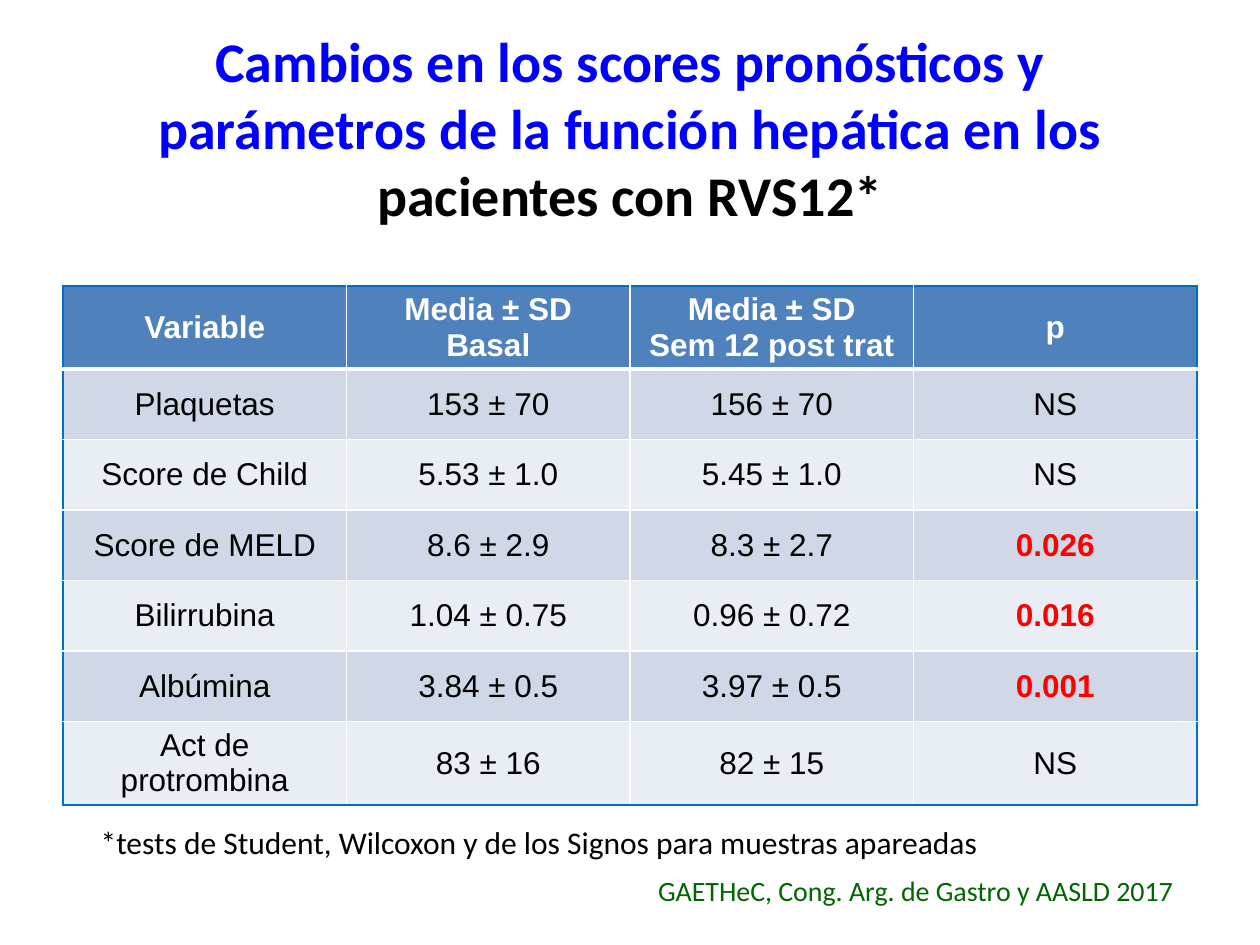
from dataclasses import dataclass

from lxml import etree
from pptx import Presentation
from pptx.dml.color import RGBColor
from pptx.enum.text import MSO_ANCHOR, MSO_AUTO_SIZE, PP_ALIGN
from pptx.oxml.ns import qn
from pptx.util import Pt

LEFT, CENTER, RIGHT = PP_ALIGN.LEFT, PP_ALIGN.CENTER, PP_ALIGN.RIGHT
MIDDLE = MSO_ANCHOR.MIDDLE
NO_AUTOFIT = MSO_AUTO_SIZE.NONE

WHITE = RGBColor(0xFF, 0xFF, 0xFF)
BLACK = RGBColor(0x00, 0x00, 0x00)
TITLE_BLUE = RGBColor(0x00, 0x00, 0xFF)
SIGNIFICANT_RED = RGBColor(0xFF, 0x00, 0x00)
SOURCE_GREEN = RGBColor(0x00, 0x66, 0x00)
HEADER_BLUE = RGBColor(0x4F, 0x81, 0xBD)
FRAME_BLUE = RGBColor(0x00, 0x70, 0xC0)
BANDS = (RGBColor(0xE9, 0xED, 0xF4), RGBColor(0xD0, 0xD8, 0xE8))

COLUMN_WIDTH, ROW_HEIGHT = 162, 40.3
RESULTS = [
    ("Variable", "Media ± SD\nBasal", "Media ± SD\nSem 12 post trat", "p"),
    ("Plaquetas", "153 ± 70", "156 ± 70", "NS"),
    ("Score de Child", "5.53 ± 1.0", "5.45 ± 1.0", "NS"),
    ("Score de MELD", "8.6 ± 2.9", "8.3 ± 2.7", "0.026"),
    ("Bilirrubina", "1.04 ± 0.75", "0.96 ± 0.72", "0.016"),
    ("Albúmina", "3.84 ± 0.5", "3.97 ± 0.5", "0.001"),
    ("Act de protrombina", "83 ± 16", "82 ± 15", "NS"),
]


@dataclass(frozen=True)
class Border:
    color: RGBColor
    width: float


@dataclass(frozen=True)
class Footnote:
    text: str
    left: float
    top: float
    width: float
    height: float
    size: float
    color: RGBColor
    align: PP_ALIGN


FRAME = Border(FRAME_BLUE, 1.5)
GRID = Border(WHITE, 1)
HEADER_RULE = Border(WHITE, 3)

FOOTNOTES = [
    Footnote("*tests de Student, Wilcoxon y de los Signos para muestras apareadas",
             50.4, 466.5, 630, 29, 18, BLACK, LEFT),
    Footnote("GAETHeC, Cong. Arg. de Gastro y AASLD 2017 ",
             365.8, 495.4, 315.4, 26.6, 16, SOURCE_GREEN, RIGHT),
]


def format_font(font, color: RGBColor, **values) -> None:
    font.color.rgb = color
    for attribute, value in values.items():
        setattr(font, attribute, value)


def add_title(slide) -> None:
    title = slide.shapes.title
    place = {"left": 36, "top": 33.8, "width": 648, "height": 77.8}
    for attribute, value in place.items():
        setattr(title, attribute, Pt(value))
    frame = title.text_frame
    frame.auto_size = NO_AUTOFIT
    frame.vertical_anchor = MIDDLE
    paragraph = frame.paragraphs[0]
    paragraph.alignment = CENTER
    parts = [
        ("Cambios en los scores pronósticos y parámetros de la función hepática en los ",
         TITLE_BLUE),
        ("pacientes con RVS12*", BLACK),
    ]
    for wording, color in parts:
        run = paragraph.add_run()
        run.text = wording
        format_font(run.font, color, name="Calibri", size=Pt(32), bold=True)


def add_border(cell, side: str, border: Border) -> None:
    line = etree.SubElement(cell._tc.get_or_add_tcPr(), qn(f"a:ln{side}"),
                            w=str(Pt(border.width)))
    fill = etree.SubElement(line, qn("a:solidFill"))
    etree.SubElement(fill, qn("a:srgbClr"), val=str(border.color))


def cell_borders(row: int, column: int) -> dict[str, Border]:
    """Borders in schema order: blue outside, white inside, thick under the header."""
    last_row, last_column = len(RESULTS) - 1, len(RESULTS[0]) - 1
    return {
        "L": FRAME if column == 0 else GRID,
        "R": FRAME if column == last_column else GRID,
        "T": FRAME if row == 0 else HEADER_RULE if row == 1 else GRID,
        "B": FRAME if row == last_row else HEADER_RULE if row == 0 else GRID,
    }


def fill_cell(cell, row: int, column: int, wording: str) -> None:
    for side, border in cell_borders(row, column).items():
        add_border(cell, side, border)
    is_header = row == 0
    is_significant = column == 3 and wording.startswith("0.")
    cell.fill.solid()
    cell.fill.fore_color.rgb = HEADER_BLUE if is_header else BANDS[row % 2]
    cell.vertical_anchor = MIDDLE
    cell.text_frame.text = wording
    color = WHITE if is_header else SIGNIFICANT_RED if is_significant else BLACK
    for paragraph in cell.text_frame.paragraphs:
        paragraph.alignment = CENTER
        format_font(paragraph.runs[0].font, color, name="Arial", size=Pt(18),
                    bold=is_header or is_significant)


def add_results_table(slide) -> None:
    rows, columns = len(RESULTS), len(RESULTS[0])
    table = slide.shapes.add_table(
        rows, columns, Pt(36), Pt(163.4),
        Pt(COLUMN_WIDTH * columns), Pt(ROW_HEIGHT * rows)).table
    for row, values in enumerate(RESULTS):
        for column, wording in enumerate(values):
            fill_cell(table.cell(row, column), row, column, wording)


def add_footnote(slide, note: Footnote) -> None:
    box = slide.shapes.add_textbox(Pt(note.left), Pt(note.top),
                                   Pt(note.width), Pt(note.height))
    frame = box.text_frame
    frame.word_wrap = True
    paragraph = frame.paragraphs[0]
    paragraph.alignment = note.align
    run = paragraph.add_run()
    run.text = note.text
    format_font(run.font, note.color, name="Calibri", size=Pt(note.size))


def main() -> None:
    presentation = Presentation()
    presentation.slide_width, presentation.slide_height = Pt(720), Pt(540)
    slide = presentation.slides.add_slide(presentation.slide_layouts[5])
    add_title(slide)
    add_results_table(slide)
    for note in FOOTNOTES:
        add_footnote(slide, note)
    presentation.save("out.pptx")


if __name__ == "__main__":
    main()
